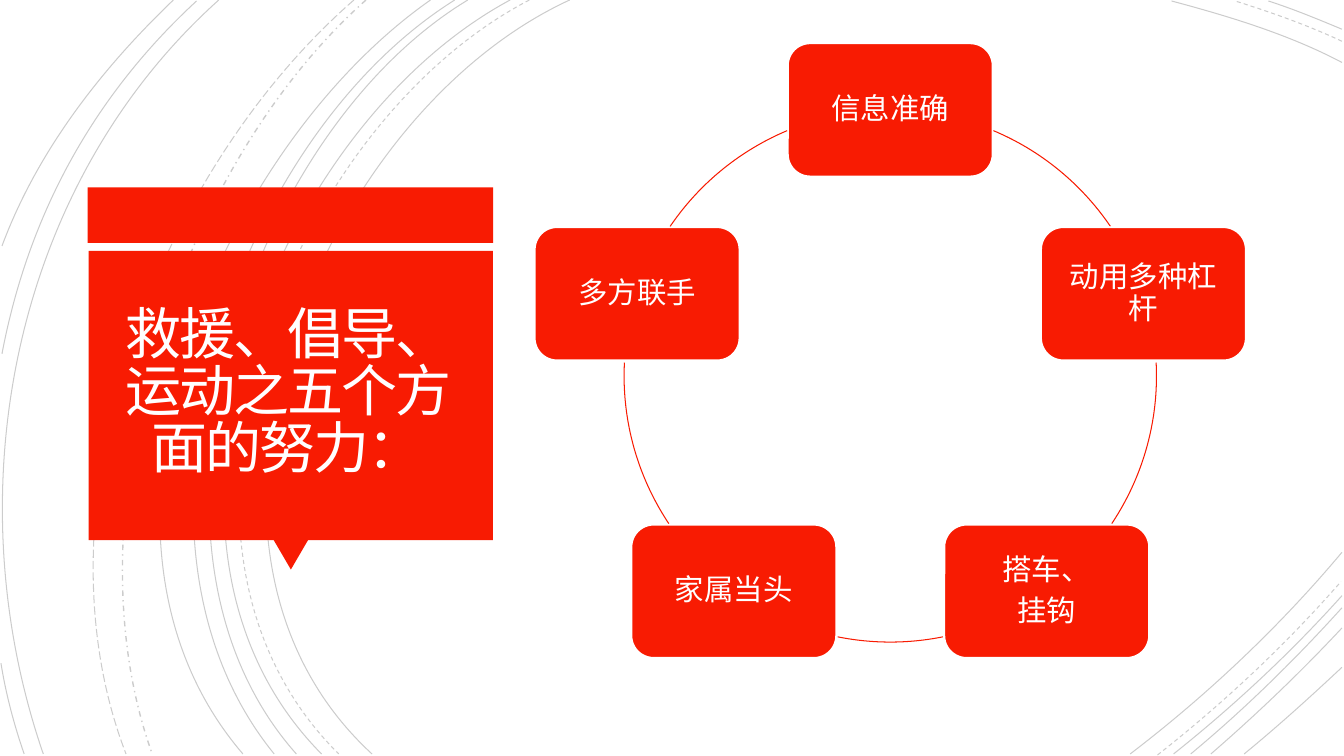
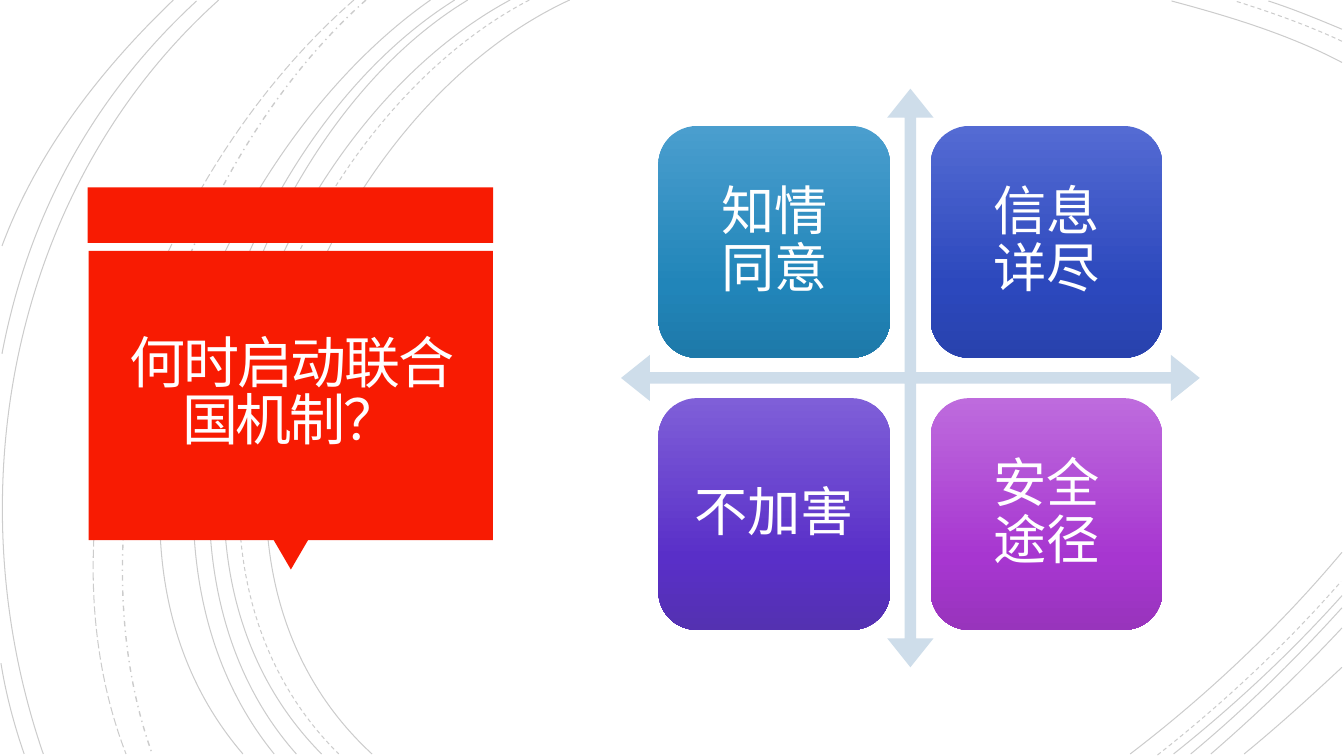
from copy import deepcopy
from dataclasses import dataclass
from itertools import product
from math import cos, radians, sin

from lxml.etree import SubElement
from pptx import Presentation
from pptx.dml.color import RGBColor
from pptx.enum.dml import MSO_LINE
from pptx.enum.lang import MSO_LANGUAGE_ID as Language
from pptx.enum.shapes import MSO_SHAPE as Preset
from pptx.enum.text import MSO_ANCHOR, MSO_AUTO_SIZE, PP_ALIGN
from pptx.oxml.ns import qn
from pptx.util import Inches, Pt


@dataclass(frozen=True)
class Theme:
    red: str = "F81B02"
    white: str = "FFFFFF"
    title_text: str = "FFFEFF"
    curve: str = "000000"
    arrow: str = "CEDDEA"
    title_font: str = "Calibri"
    body_font: str = "Roboto Slab"
    title_size: int = 40
    node_size: int = 21
    tile_size: int = 38


THEME = Theme()

# Background curves: start, two control points, end; grouped by line style
CURVES = {
    (MSO_LINE.SOLID, 0.75): [
        (5.65, 0, 3.15, 1.15, 1.43, 5.4, 3.69, 7.48),
        (13.31, 0.62, 12.78, 0.34, 12.18, 0.16, 11.62, 0.01),
        (11.21, 7.48, 11.97, 6.9, 12.69, 6.22, 13.31, 5.48),
        (5.06, 0, 2.7, 1.27, 1.1, 5.37, 3.19, 7.48),
        (13.31, 0.29, 13.07, 0.19, 12.83, 0.09, 12.58, 0.01),
        (11.64, 7.48, 12.23, 7.01, 12.8, 6.48, 13.31, 5.91),
        (4.64, 0, 2.44, 1.33, 1.1, 5.41, 2.94, 7.48),
        (11.81, 7.48, 12.34, 7.04, 12.84, 6.55, 13.31, 6.03),
        (4.51, 0, 2.31, 1.38, 0.97, 5.33, 2.72, 7.48),
        (12.01, 7.48, 12.46, 7.09, 12.9, 6.67, 13.31, 6.23),
        (4.27, 0, 2.17, 1.47, 0.53, 5.29, 2.41, 7.48),
        (12.34, 7.48, 12.67, 7.21, 12.99, 6.92, 13.31, 6.62),
        (2.17, 0, 0.11, 1.85, -0.46, 4.9, 0.43, 7.48),
        (1.95, 0.01, 0.92, 0.96, 0.28, 2.14, 0.02, 3.51),
        (0.01, 6.58, 0.06, 6.89, 0.14, 7.19, 0.24, 7.48),
        (1.72, 0, 1, 0.69, 0.37, 1.5, 0.02, 2.44),
    ],
    (MSO_LINE.DASH, 0.75): [
        (5.25, 0, 2.85, 1.25, 1.23, 5.37, 3.36, 7.48),
        (13.31, 0.41, 12.97, 0.25, 12.6, 0.12, 12.25, 0.01),
        (11.48, 7.49, 12.13, 6.98, 12.75, 6.4, 13.3, 5.77),
    ],
    (MSO_LINE.DASH_DOT, 1): [(3.63, 0, 1.76, 1.66, 0.65, 5.09, 1.51, 7.48)],
    (MSO_LINE.LONG_DASH, 0.75): [(3.51, 0, 1.57, 1.69, 0.29, 4.99, 1.25, 7.48)],
}

EFFORTS = ["信息准确", "动用多种杠杆", "搭车、\n挂钩", "家属当头", "多方联手"]
# Visible part of the ring between neighbouring nodes, in degrees
ARC_SPANS = [(292.8, 325.8), (357.1, 33.7), (78.6, 101.4), (146.3, 182.9), (214.2, 247.2)]

PRINCIPLES = [
    ("知情\v同意", ("4A9ECE", "2185B9", "1E79A9")),
    ("信息\v详尽", ("546BD3", "2C48BD", "2842AD")),
    ("不加害", ("7F5FD8", "592FC8", "5431B1")),
    ("安全\v途径", ("BE6BDD", "A736D0", "9834BC")),
]


def set_values(target, values):
    for name, value in values.items():
        setattr(target, name, value)


def set_line(shape, color, width):
    shape.line.color.rgb = RGBColor.from_string(color)
    shape.line.width = Pt(width)


def add_preset(slide, preset, box, fill=None):
    shape = slide.shapes.add_shape(preset, *map(Inches, box))
    shape.shadow.inherit = False
    shape.line.fill.background()
    if fill:
        shape.fill.solid()
        shape.fill.fore_color.rgb = RGBColor.from_string(fill)
    else:
        shape.fill.background()
    return shape


def write_text(shape, text, font, size, color, margin, line_spacing, space_after=0):
    frame = shape.text_frame
    frame.text = text
    sides = ("margin_left", "margin_top", "margin_right", "margin_bottom")
    set_values(frame, dict.fromkeys(sides, Inches(margin)))
    set_values(frame, {"word_wrap": True, "auto_size": MSO_AUTO_SIZE.NONE,
                       "vertical_anchor": MSO_ANCHOR.MIDDLE})
    for paragraph in frame.paragraphs:
        set_values(paragraph, {"alignment": PP_ALIGN.CENTER, "line_spacing": line_spacing,
                               "space_before": Pt(0), "space_after": Pt(space_after)})
        for run in paragraph.runs:
            set_values(run.font, {"name": font, "size": Pt(size),
                                  "language_id": Language.SIMPLIFIED_CHINESE})
            run.font.color.rgb = RGBColor.from_string(color)
            SubElement(run.font._element, qn("a:ea"), typeface=font)


def set_gradient(shape, colors):
    """Fill from top to bottom with three stops."""
    shape.fill.gradient()
    shape.fill.gradient_angle = 270
    stop_list = shape._element.spPr.find(qn("a:gradFill")).find(qn("a:gsLst"))
    stop_list.append(deepcopy(stop_list[-1]))
    for stop, position, color in zip(shape.fill.gradient_stops, (0, 0.69, 1), colors):
        stop.position = position
        stop.color.rgb = RGBColor.from_string(color)


def add_curve(slide, curve, dash, width):
    lengths = [Inches(value) for value in curve]
    start, *rest = zip(lengths[0::2], lengths[1::2])
    builder = slide.shapes.build_freeform(*start)
    builder.add_line_segments(rest, close=False)
    shape = builder.convert_to_shape()
    # Turn the three line points into one cubic Bézier segment
    outline = next(shape._element.iter(qn("a:path")))
    segments = outline.findall(qn("a:lnTo"))
    bezier = SubElement(outline, qn("a:cubicBezTo"))
    for segment in segments:
        bezier.append(segment[0])
        outline.remove(segment)
    shape.shadow.inherit = False
    shape.fill.background()
    set_line(shape, THEME.curve, width)
    shape.line.dash_style = dash
    color = shape.line._ln.find(qn("a:solidFill"))[0]
    SubElement(color, qn("a:alpha"), val="20000")


# Shared layout: background curves and the red title panel
def decorate_layout(layout, slide):
    for placeholder in list(layout.placeholders):
        if placeholder.placeholder_format.idx != 0:
            placeholder._element.getparent().remove(placeholder._element)
    for style, curves in CURVES.items():
        for curve in curves:
            add_curve(slide, curve, *style)
    add_preset(slide, Preset.RECTANGLE, (0.87, 1.86, 4.02, 0.55), THEME.red)
    pointer = add_preset(slide, Preset.ISOSCELES_TRIANGLE, (2.71, 5.35, 0.35, 0.3), THEME.red)
    pointer.rotation = 180
    add_preset(slide, Preset.RECTANGLE, (0.88, 2.49, 4.01, 2.87), THEME.red)
    artwork = [shape for shape in slide.shapes if not shape.is_placeholder]
    for index, shape in enumerate(artwork, start=2):
        layout.shapes._spTree.insert(index, shape._element)


def set_title(slide, text, width):
    title = slide.shapes.title
    set_values(title, {"left": Inches(0.97), "top": Inches(2.57),
                       "width": Inches(width), "height": Inches(2.69)})
    write_text(title, text, THEME.title_font, THEME.title_size, THEME.title_text, 0.25, 0.85)
    for run in title.text_frame.paragraphs[0].runs:
        run.font._element.set("spc", "-150")


# Slide 1: five nodes on a ring
def add_effort_ring(slide):
    center_x, center_y, radius = 8.83, 3.73, 2.64
    width, height = 2.03, 1.32
    for index, (text, span) in enumerate(zip(EFFORTS, ARC_SPANS)):
        angle = radians(72 * index - 90)
        box = (center_x + radius * cos(angle) - width / 2,
               center_y + radius * sin(angle) - height / 2, width, height)
        node = add_preset(slide, Preset.ROUNDED_RECTANGLE, box, THEME.red)
        set_line(node, THEME.white, 1.25)
        write_text(node, text, THEME.body_font, THEME.node_size, THEME.white, 0.09, 0.9, 7)
        arc = add_preset(slide, Preset.ARC, (center_x - radius, center_y - radius,
                                             2 * radius, 2 * radius))
        set_line(arc, THEME.red, 0.75)
        for end, degrees in enumerate(span):
            arc.adjustments[end] = degrees * 0.6  # 60000 units per degree, scaled by 100000


# Slide 2: four tiles around crossed arrows
def add_principle_matrix(slide):
    arrows = add_preset(slide, Preset.QUAD_ARROW, (6.16, 0.88, 5.74, 5.74), THEME.arrow)
    for index, value in enumerate((0.02, 0.04, 0.05)):
        arrows.adjustments[index] = value
    size, pitch = 2.3, 2.7
    for (row, column), (text, colors) in zip(product(range(2), repeat=2), PRINCIPLES):
        box = (6.53 + column * pitch, 1.25 + row * pitch, size, size)
        tile = add_preset(slide, Preset.ROUNDED_RECTANGLE, box)
        set_gradient(tile, colors)
        write_text(tile, text, THEME.body_font, THEME.tile_size, THEME.white, 0.16, 0.9, 13)


def main():
    presentation = Presentation()
    set_values(presentation, {"slide_width": Inches(13.33), "slide_height": Inches(7.5)})
    layout = presentation.slide_layouts.get_by_name("Title Only")
    ring_slide, matrix_slide = (presentation.slides.add_slide(layout) for _ in range(2))
    decorate_layout(layout, ring_slide)

    set_title(ring_slide, "救援、倡导、运动之五个方面的努力：", 3.76)
    add_effort_ring(ring_slide)

    set_title(matrix_slide, "何时启动联合国机制？", 3.83)
    add_principle_matrix(matrix_slide)
    presentation.save("out.pptx")


if __name__ == "__main__":
    main()
